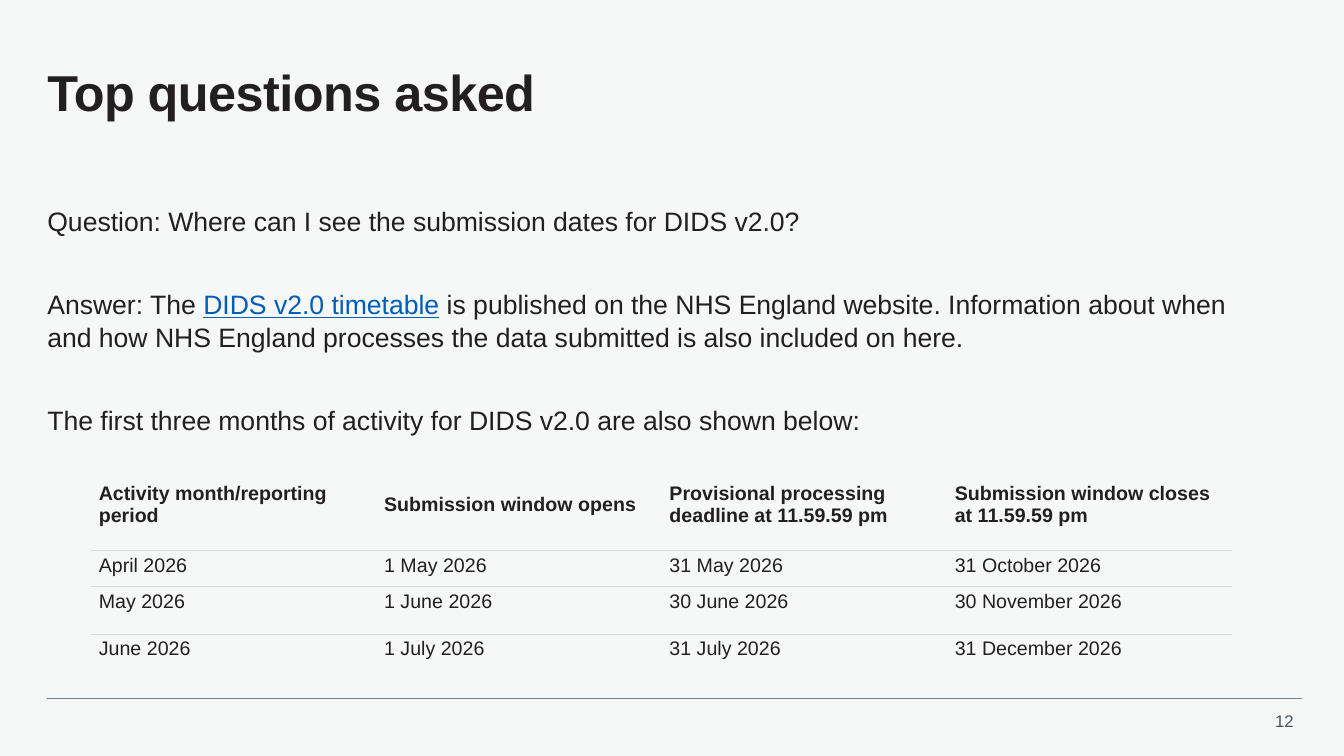
from lxml.etree import SubElement
from pptx import Presentation
from pptx.dml.color import RGBColor
from pptx.enum.shapes import MSO_CONNECTOR
from pptx.enum.text import MSO_ANCHOR, PP_ALIGN
from pptx.oxml.ns import qn
from pptx.util import Inches, Pt

INK = "231F20"
RULE = "D5DADE"
PLAIN = "{2D5ABB26-0587-4C30-8999-92F81FD0307C}"
BODY = [
    ["Question: Where can I see the submission dates for DIDS v2.0?"],
    ["Answer: The ", "DIDS v2.0 timetable",
     " is published on the NHS England website. Information about when and how "
     "NHS England processes the data submitted is also included on here."],
    ["The first three months of activity for DIDS v2.0 are also shown below:"],
]
DATES = [
    ["Activity month/reporting period", "Submission window opens",
     "Provisional processing deadline at 11.59.59 pm",
     "Submission window closes at 11.59.59 pm"],
    ["April 2026", "1 May 2026", "31 May 2026", "31 October 2026"],
    ["May 2026", "1 June 2026", "30 June 2026", "30 November 2026"],
    ["June 2026", "1 July 2026", "31 July 2026", "31 December 2026"],
]
ROWS = [0.9, 0.36, 0.47, 0.47]
WIDTH = 2.83


def color(code):
    """Turn a hex string into a colour."""
    return RGBColor.from_string(code)


def style(font, size, code=INK, bold=False):
    """Set the face, size, colour and weight of a font."""
    font.name = "Arial"
    font.size = Pt(size)
    font.bold = bold
    font.color.rgb = color(code)


def add_box(slide, left, top, width, height, inset=0):
    """Add a wrapping text box and return its frame."""
    box = slide.shapes.add_textbox(
        Inches(left), Inches(top), Inches(width), Inches(height))
    frame = box.text_frame
    frame.word_wrap = True
    frame.margin_left = frame.margin_right = Inches(inset)
    frame.margin_top = frame.margin_bottom = Inches(inset / 2)
    return frame


def add_title(slide, text):
    """Add the slightly tightened heading."""
    frame = add_box(slide, 0.47, 0.47, 12.47, 0.95)
    frame.vertical_anchor = MSO_ANCHOR.MIDDLE
    para = frame.paragraphs[0]
    para.line_spacing = 0.9
    style(para.font, 36, bold=True)
    run = para.add_run()
    run.text = text
    run._r.get_or_add_rPr().set("spc", "-40")


def add_body(slide, paras):
    """Add the question and answer; a second run is the link text."""
    frame = add_box(slide, 0.47, 2.02, 12.13, 2.3)
    for i, parts in enumerate(paras):
        para = frame.add_paragraph() if i else frame.paragraphs[0]
        para.line_spacing = 1.05
        para.space_after = Pt(35)
        style(para.font, 19)
        for j, part in enumerate(parts):
            run = para.add_run()
            run.text = part
            if j == 1:
                run.font.color.rgb = color("005EB8")
                run.font.underline = True


def add_edge(cell, side, points):
    """Draw one border of a table cell."""
    line = SubElement(cell._tc.get_or_add_tcPr(), qn(f"a:{side}"),
                      w=str(Pt(points)))
    fill = SubElement(line, qn("a:solidFill"))
    SubElement(fill, qn("a:srgbClr"), val=RULE)


def add_dates(slide, rows):
    """Add the table of submission dates with thin row rules."""
    table = slide.shapes.add_table(
        len(rows), len(rows[0]), Inches(0.9), Inches(4.56),
        Inches(WIDTH * len(rows[0])), Inches(sum(ROWS))).table
    table.first_row = table.horz_banding = False
    table._tbl.tblPr.find(qn("a:tableStyleId")).text = PLAIN
    for col in table.columns:
        col.width = Inches(WIDTH)
    for r, texts in enumerate(rows):
        table.rows[r].height = Inches(ROWS[r])
        for c, text in enumerate(texts):
            cell = table.cell(r, c)
            cell.text = text
            cell.margin_left = cell.margin_right = Inches(0.08)
            cell.margin_top = cell.margin_bottom = Inches(0.04)
            cell.vertical_anchor = MSO_ANCHOR.TOP if r else MSO_ANCHOR.MIDDLE
            style(cell.text_frame.paragraphs[0].font, 14, bold=r == 0)
            if r:
                add_edge(cell, "lnT", 1 if r == 1 else 0.33)
            if r < len(rows) - 1:
                add_edge(cell, "lnB", 0.33 if r else 1)
            cell.fill.background()


def add_footer(slide, number):
    """Add the bottom rule and the page number."""
    line = slide.shapes.add_connector(
        MSO_CONNECTOR.STRAIGHT, Inches(0.47), Inches(6.93),
        Inches(12.91), Inches(6.93))
    line.line.color.rgb = color("768692")
    line.line.width = Pt(0.5)
    SubElement(line._element.spPr, qn("a:effectLst"))
    para = add_box(slide, 12.43, 7, 0.5, 0.3, 0.1).paragraphs[0]
    para.text = number
    para.alignment = PP_ALIGN.RIGHT
    style(para.font, 12, "425563")


def main():
    """Build the slide and save it."""
    deck = Presentation()
    deck.slide_width = Inches(13.33)
    deck.slide_height = Inches(7.5)
    slide = deck.slides.add_slide(deck.slide_layouts[6])
    slide.background.fill.solid()
    slide.background.fill.fore_color.rgb = color("F6F8F8")
    add_footer(slide, "12")
    add_body(slide, BODY)
    add_title(slide, "Top questions asked")
    add_dates(slide, DATES)
    deck.save("out.pptx")


if __name__ == "__main__":
    main()
